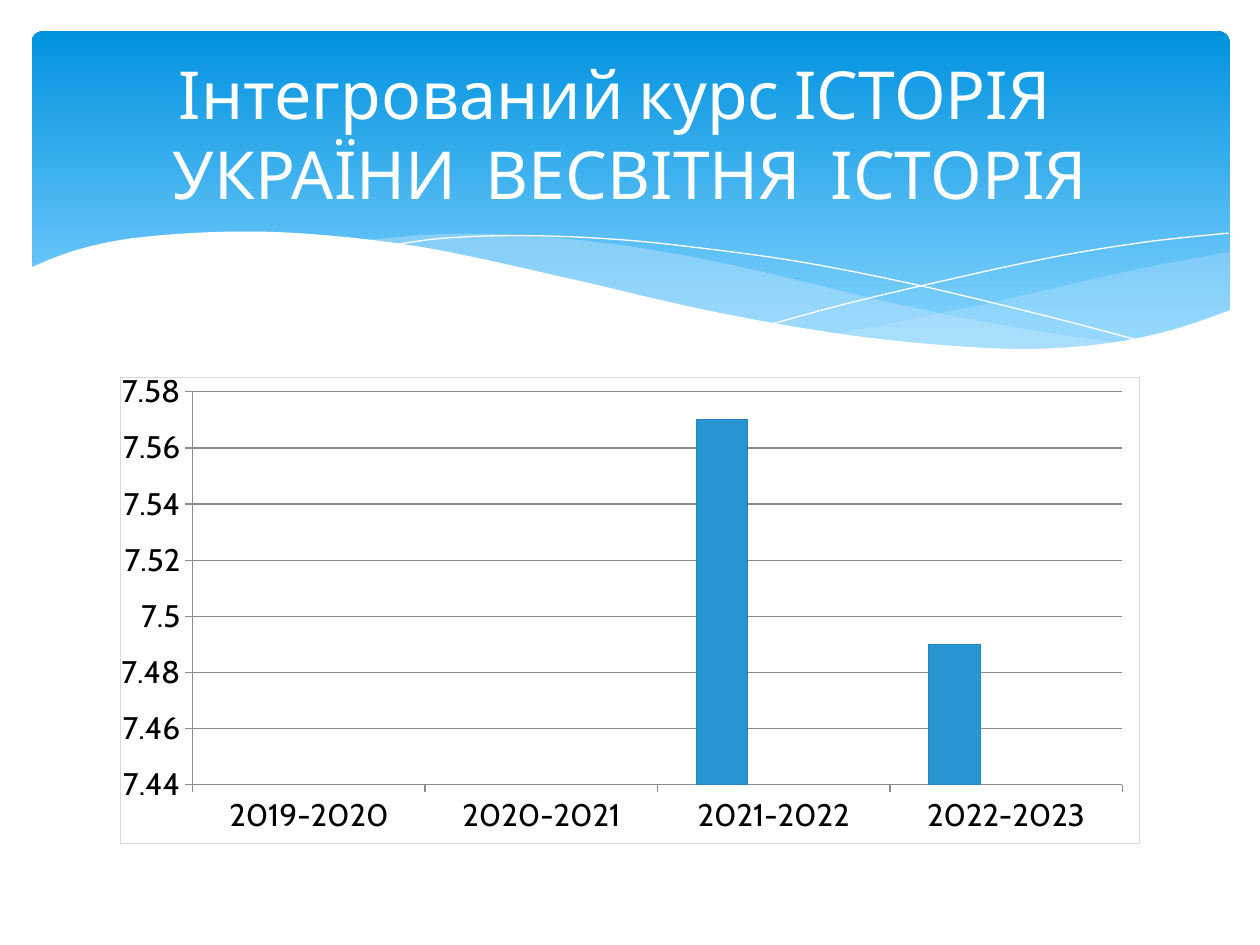
from dataclasses import dataclass

from lxml import etree
from pptx import Presentation
from pptx.chart.data import CategoryChartData
from pptx.dml.color import RGBColor
from pptx.enum.chart import XL_CHART_TYPE as ChartType, XL_TICK_MARK as TickMark
from pptx.enum.shapes import MSO_SHAPE as Preset
from pptx.enum.text import MSO_ANCHOR as Anchor, PP_ALIGN as Align
from pptx.oxml import parse_xml
from pptx.oxml.ns import nsdecls, qn
from pptx.util import Inches, Pt


@dataclass(frozen=True)
class Theme:
    white: str = "FFFFFF"
    black: str = "000000"
    banner_light: str = "83D3FE"
    banner_dark: str = "0293E0"
    wave: str = "C6E7FC"
    axis: str = "8B8B8B"
    border: str = "D9D9D9"
    bar_line: str = "2486BB"
    series: tuple = ("2896D1", "31B6FD", "A4D3FD")
    font: str = "Cabin"
    title_size: float = 37.8
    label_size: float = 18
    line_width: float = 0.75


THEME = Theme()

# Waves: key points in inches from the banner's top left corner
RIGHT_WAVE = (
    [(9.51, 1.75), (8.96, 1.85), (8.36, 1.98), (7.54, 2.17), (6.81, 2.32), (6.36, 2.4)],
    [(6.36, 2.4), (6.94, 2.47), (7.56, 2.52), (8.1, 2.52), (8.56, 2.48), (9.03, 2.38), (9.51, 2.22)],
)
LEFT_WAVE = (
    [(8.68, 2.48), (7.82, 2.35), (6.81, 2.15), (5.73, 1.89), (5.03, 1.75),
     (4.4, 1.66), (3.74, 1.61), (3.19, 1.61), (2.61, 1.66)],
    [(2.61, 1.66), (3.37, 1.78), (4.24, 1.97), (5.05, 2.15), (5.93, 2.33),
     (6.7, 2.45), (7.36, 2.52), (8.03, 2.53), (8.68, 2.48)],
)
FALLING_LINE = [(2.84, 1.7), (3.28, 1.64), (3.91, 1.62), (4.64, 1.65), (5.32, 1.72),
                (6.11, 1.83), (7.02, 2.01), (8.06, 2.26), (8.82, 2.46)]
RISING_LINE = [(5.88, 2.32), (6.47, 2.16), (7.23, 1.98), (8.11, 1.79), (8.85, 1.67), (9.5, 1.6)]
FRONT_WAVE = (
    [(-0.02, 1.88), (0.34, 1.74), (0.81, 1.64), (1.52, 1.59), (2.25, 1.61), (3.15, 1.72),
     (4.22, 1.95), (5.3, 2.2), (6.22, 2.37), (7.01, 2.47), (7.84, 2.52), (8.5, 2.48),
     (9.05, 2.37), (9.52, 2.21)],
    [(9.52, 3.04), (-0.02, 3.04)],
)


def color(value):
    return RGBColor.from_string(value)


def set_all(target, values):
    for name, value in values.items():
        setattr(target, name, value)


def style_line(line, value, width=THEME.line_width):
    line.color.rgb = color(value)
    line.width = Pt(width)


def smooth(points, steps=6):
    """Points along a Catmull-Rom curve through the key points."""
    if len(points) < 3:
        return points
    ends = [points[0], *points, points[-1]]
    curve = []
    for a, b, c, d in zip(ends, ends[1:], ends[2:], ends[3:]):
        for t in (step / steps for step in range(steps)):
            curve.append(tuple(
                0.5 * (2 * q + (r - p) * t + (2 * p - 5 * q + 4 * r - s) * t ** 2
                       + (3 * q - p - 3 * r + s) * t ** 3)
                for p, q, r, s in zip(a, b, c, d)))
    return curve + [points[-1]]


def add_curve(slide, left, top, edges, fill=None, alpha=None):
    points = [(Inches(left + x), Inches(top + y)) for edge in edges for x, y in smooth(edge)]
    builder = slide.shapes.build_freeform(*points[0])
    builder.add_line_segments(points[1:], close=fill is not None)
    shape = builder.convert_to_shape()
    shape.shadow.inherit = False
    if fill is None:
        shape.fill.background()
        style_line(shape.line, THEME.white, 0)
        return
    shape.fill.solid()
    shape.fill.fore_color.rgb = color(fill)
    shape.line.fill.background()
    if alpha is not None:
        rgb = shape.fill._xPr.find(".//" + qn("a:srgbClr"))
        etree.SubElement(rgb, qn("a:alpha")).set("val", str(alpha * 1000))


def add_banner(slide, left, top, width, height):
    # Rounded gradient panel
    panel = slide.shapes.add_shape(Preset.ROUNDED_RECTANGLE, *map(Inches, (left, top, width, height)))
    panel.adjustments[0] = 0.034
    panel.shadow.inherit = False
    panel.line.fill.background()
    panel.fill.gradient()
    panel.fill.gradient_angle = 90
    stops = ((0.1, THEME.banner_light), (1, THEME.banner_dark))
    for stop, (position, value) in zip(panel.fill.gradient_stops, stops):
        stop.position = position
        stop.color.rgb = color(value)

    # Waves, from back to front
    add_curve(slide, left, top, RIGHT_WAVE, THEME.wave, 29)
    add_curve(slide, left, top, LEFT_WAVE, THEME.wave, 40)
    add_curve(slide, left, top, [FALLING_LINE])
    add_curve(slide, left, top, [RISING_LINE])
    add_curve(slide, left, top, FRONT_WAVE, THEME.white)


def add_title(slide, left, top, width, height, text):
    frame = slide.shapes.add_textbox(*map(Inches, (left, top, width, height))).text_frame
    set_all(frame, {"word_wrap": True, "vertical_anchor": Anchor.MIDDLE})
    paragraph = frame.paragraphs[0]
    paragraph.alignment = Align.CENTER
    run = paragraph.add_run()
    run.text = text
    set_all(run.font, {"name": THEME.font, "size": Pt(THEME.title_size)})
    run.font.color.rgb = color(THEME.white)


def style_axis(axis):
    set_all(axis, {"major_tick_mark": TickMark.OUTSIDE, "minor_tick_mark": TickMark.NONE})
    style_line(axis.format.line, THEME.axis)
    font = axis.tick_labels.font
    set_all(font, {"name": THEME.font, "size": Pt(THEME.label_size)})
    font.color.rgb = color(THEME.black)


def frame_chart(chart, x, y, width, height):
    """Border the chart and fix the inner plot area, as fractions of the chart."""
    chart_space = chart._chartSpace
    chart_space.find(qn("c:chart")).addnext(parse_xml(
        f'<c:spPr {nsdecls("c", "a")}><a:noFill/><a:ln w="{Pt(THEME.line_width)}"><a:solidFill>'
        f'<a:srgbClr val="{THEME.border}"/></a:solidFill></a:ln></c:spPr>'))
    plot_area = chart_space.find(".//" + qn("c:plotArea"))
    for layout in plot_area.findall(qn("c:layout")):
        plot_area.remove(layout)
    layout = etree.Element(qn("c:layout"))
    manual = etree.SubElement(layout, qn("c:manualLayout"))
    values = {"layoutTarget": "inner", "xMode": "edge", "yMode": "edge",
              "x": x, "y": y, "w": width, "h": height}
    for name, value in values.items():
        etree.SubElement(manual, qn("c:" + name)).set("val", str(value))
    plot_area.insert(0, layout)


def add_score_chart(slide, left, top, width, height):
    data = CategoryChartData()
    data.categories = ["2019-2020", "2020-2021", "2021-2022", "2022-2023"]
    data.add_series("Series 1", (None, None, 7.57, 7.49))
    for name in ("Series 2", "Series 3"):
        data.add_series(name, (None,) * 4)
    chart = slide.shapes.add_chart(
        ChartType.COLUMN_CLUSTERED, *map(Inches, (left, top, width, height)), data).chart
    set_all(chart, {"has_legend": False, "has_title": False})
    set_all(chart.font, {"name": "Arial", "size": Pt(10)})

    # Bars
    plot = chart.plots[0]
    set_all(plot, {"gap_width": 150, "overlap": 0, "vary_by_categories": False})
    for series, value in zip(plot.series, THEME.series):
        series.format.fill.solid()
        series.format.fill.fore_color.rgb = color(value)
        style_line(series.format.line, THEME.bar_line)

    # Axes
    value_axis = chart.value_axis
    set_all(value_axis, {"minimum_scale": 7.44, "maximum_scale": 7.58,
                         "major_unit": 0.02, "has_major_gridlines": True})
    style_line(value_axis.major_gridlines.format.line, THEME.axis)
    set_all(value_axis.tick_labels, {"number_format": "General", "number_format_is_linked": False})
    for axis in (chart.category_axis, value_axis):
        style_axis(axis)
    frame_chart(chart, 0.071, 0.031, 0.912, 0.843)


def main():
    presentation = Presentation()
    set_all(presentation, {"slide_width": Inches(10), "slide_height": Inches(7.5)})
    slide = presentation.slides.add_slide(presentation.slide_layouts[6])
    add_banner(slide, 0.25, 0.25, 9.51, 2.7)
    add_score_chart(slide, 0.95, 2.96, 8.1, 3.74)
    add_title(slide, 0.5, 0.37, 9, 1.37, "Інтегрований курс ІСТОРІЯ   УКРАЇНИ  ВЕСВІТНЯ  ІСТОРІЯ")
    presentation.save("out.pptx")


if __name__ == "__main__":
    main()
